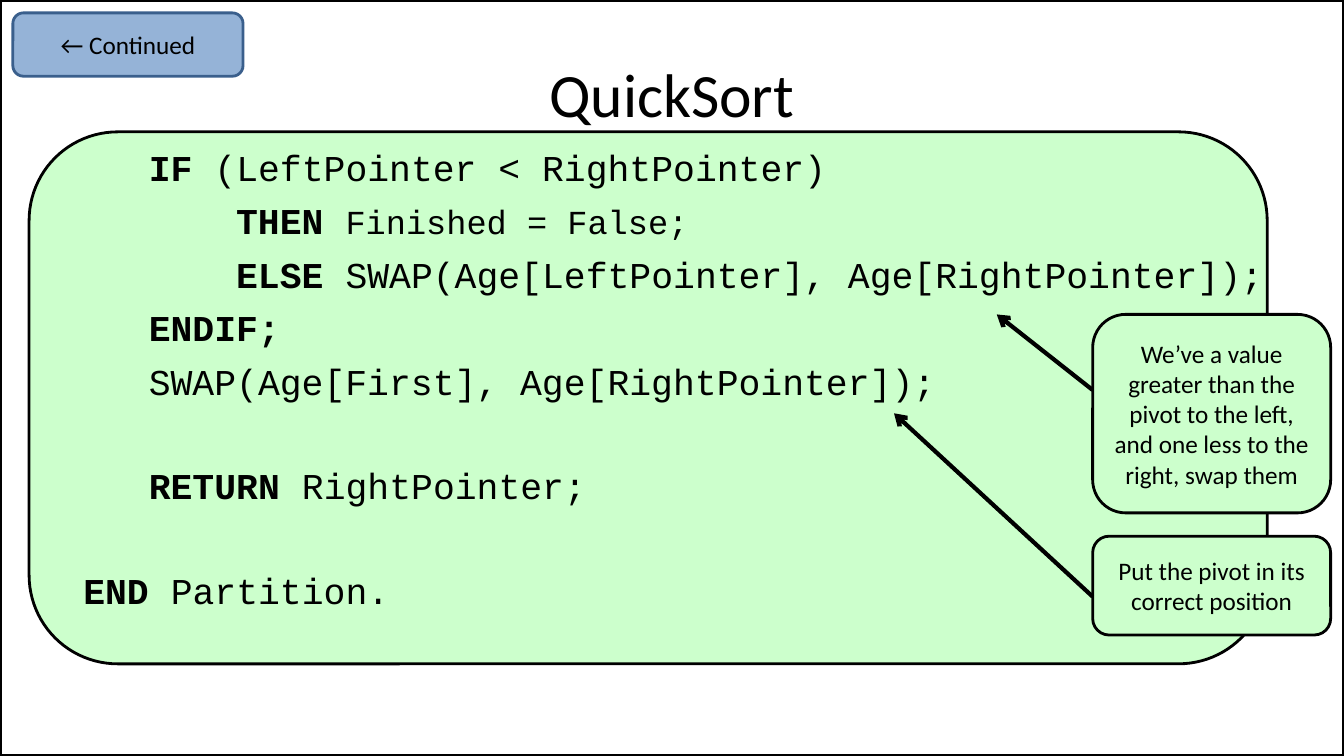
from lxml.etree import SubElement
from pptx import Presentation
from pptx.dml.color import RGBColor
from pptx.enum.shapes import MSO_CONNECTOR as Connector, MSO_SHAPE as Shape
from pptx.enum.text import MSO_ANCHOR as Anchor, MSO_AUTO_SIZE as AutoSize, PP_ALIGN as Align
from pptx.oxml.ns import qn
from pptx.util import Pt

COLORS = {"ink": "000000", "mint": "CCFFCC", "blue": "95B3D7", "navy": "3A5F8C"}
CODE_SIZE = 26
CHAR_WIDTH = CODE_SIZE * 0.6
BASE_INDENT = 4.3
LINE_GAP = 7
BLANK_LINE = 36.4

CODE = [
    (3, 0, [("IF ", True, 26), ("(LeftPointer < RightPointer)", False, 26)]),
    (7, 0, [("THEN ", True, 26), ("Finished = False;", False, 24)]),
    (7, 0, [("ELSE ", True, 26), ("SWAP(Age[LeftPointer], Age[RightPointer]);", False, 26)]),
    (3, 0, [("ENDIF;", True, 26)]),
    (3, 0, [("SWAP(Age[First], Age[RightPointer]);", False, 26)]),
    (3, 1, [("RETURN ", True, 26), ("RightPointer;", False, 26)]),
    (0, 1, [("END", True, 26), (" Partition.", False, 26)]),
]

CALLOUTS = [
    ((780.5, 224.6, 170, 141.8),
     "We’ve a value greater than the pivot to the left, and one less to the right, swap them",
     (780.5, 278.6, 712, 224.6)),
    ((780.5, 383, 170, 70.6), "Put the pivot in its correct position",
     (780.5, 426.2, 638.6, 295.2)),
]


class SlideWriter:
    """Draws styled elements on one page."""

    def __init__(self, deck):
        """Open a page with title and body placeholders."""
        self.page = deck.slides.add_slide(deck.slide_layouts[1])

    def color(self, name):
        """Return a named colour."""
        return RGBColor.from_string(COLORS[name])

    def span(self, para, text, size, font="Calibri", bold=False):
        """Add one run to a paragraph."""
        span = para.add_run()
        span.text = text
        span.font.name = font
        span.font.size = Pt(size)
        span.font.bold = bold
        span.font.color.rgb = self.color("ink")

    def box(self, kind, place, fill=None, line="ink", width=2, text=None):
        """Add an outlined shape with optional centred text."""
        box = self.page.shapes.add_shape(kind, *map(Pt, place))
        box.shadow.inherit = False
        if fill:
            box.fill.solid()
            box.fill.fore_color.rgb = self.color(fill)
        else:
            box.fill.background()
        box.line.color.rgb = self.color(line)
        box.line.width = Pt(width)
        if text:
            frame = box.text_frame
            frame.word_wrap = True
            frame.vertical_anchor = Anchor.MIDDLE
            para = frame.paragraphs[0]
            para.alignment = Align.CENTER
            self.span(para, text, 18)

    def placeholder(self, holder, place, anchor):
        """Place a placeholder in front and return its text frame."""
        holder.left, holder.top, holder.width, holder.height = map(Pt, place)
        holder.element.getparent().append(holder.element)
        frame = holder.text_frame
        frame.word_wrap = True
        frame.auto_size = AutoSize.NONE
        frame.vertical_anchor = anchor
        return frame

    def title(self, text, place):
        """Fill the title placeholder."""
        frame = self.placeholder(self.page.shapes.title, place, Anchor.MIDDLE)
        para = frame.paragraphs[0]
        para.alignment = Align.CENTER
        self.span(para, text, 44)

    def code(self, lines, place):
        """Fill the body placeholder with indented code."""
        frame = self.placeholder(self.page.placeholders[1], place, Anchor.TOP)
        for number, (indent, blanks, spans) in enumerate(lines):
            para = frame.add_paragraph() if number else frame.paragraphs[0]
            para.space_before = Pt(LINE_GAP + blanks * BLANK_LINE)
            props = para._p.get_or_add_pPr()
            props.set("marL", str(Pt(BASE_INDENT + indent * CHAR_WIDTH)))
            props.set("indent", "0")
            SubElement(props, qn("a:buNone"))
            for text, bold, size in spans:
                self.span(para, text, size, "Courier New", bold)

    def arrow(self, ends):
        """Add an arrow between two points."""
        arrow = self.page.shapes.add_connector(Connector.STRAIGHT, *map(Pt, ends))
        arrow.line.color.rgb = self.color("ink")
        arrow.line.width = Pt(3)
        SubElement(arrow.line._get_or_add_ln(), qn("a:tailEnd"), type="arrow")
        SubElement(arrow.element.spPr, qn("a:effectLst"))


def main():
    """Build and save the deck."""
    deck = Presentation()
    deck.slide_width, deck.slide_height = Pt(960), Pt(540)
    writer = SlideWriter(deck)
    writer.box(Shape.RECTANGLE, (0, 0, 960, 540), width=3)
    writer.box(Shape.ROUNDED_RECTANGLE, (20.8, 94.2, 884.4, 380), "mint")
    writer.code(CODE, (48, 100, 864, 356.4))
    writer.title("QuickSort", (48, 21.6, 864, 90))
    writer.box(Shape.ROUNDED_RECTANGLE, (9.2, 9.2, 164.4, 45.2), "blue", "navy",
               text="← Continued")
    for place, text, ends in CALLOUTS:
        writer.box(Shape.ROUNDED_RECTANGLE, place, "mint", text=text)
        writer.arrow(ends)
    deck.save("out.pptx")


if __name__ == "__main__":
    main()
